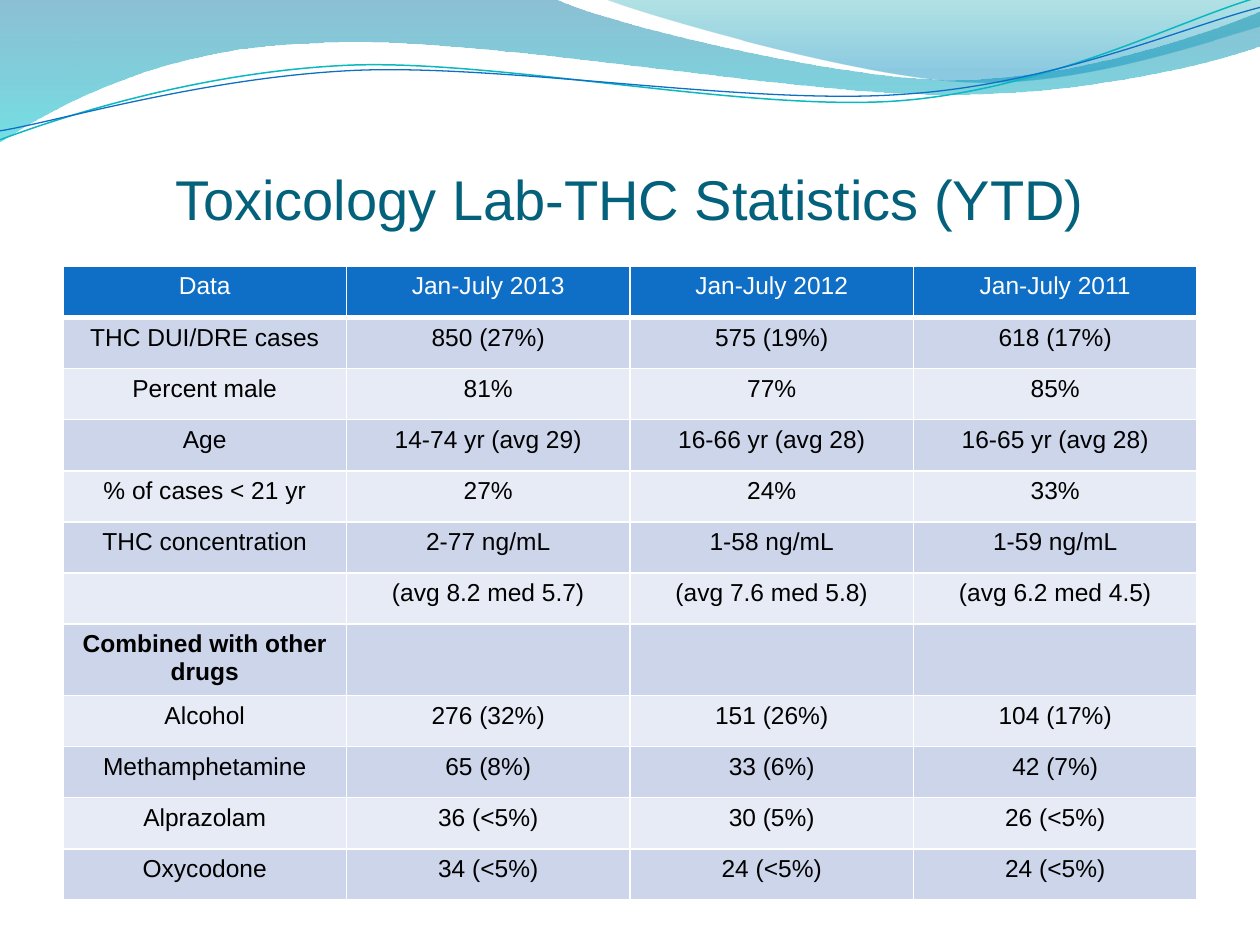
from lxml.etree import SubElement
from pptx import Presentation
from pptx.dml.color import RGBColor
from pptx.enum.text import MSO_ANCHOR, PP_ALIGN
from pptx.oxml.ns import qn
from pptx.util import Cm, Pt

WHITE = "FFFFFF"
HEADER_BLUE = "0F6FC6"
BANDS = ["CCD5EA", "E7EBF5"]
STRAND_ROTATION = 357.3

LOWER_WAVE = [
    [(0, 0)],
    [(11.18, -0.03)],
    [(12.09, 0.43), (16.87, 1.6), (19.25, 1.6)],
    [(21.67, 1.6), (24.33, 0.66), (25.4, 0.23)],
    [(25.43, 0.91)],
    [(24.97, 1.12), (22.1, 1.93), (18.95, 1.9)],
    [(15.8, 1.9), (9.7, 0.71), (6.53, 0.86)],
    [(3.28, 0.91), (1.17, 2.11), (-0.03, 2.87)],
    [(0, 0)],
]
UPPER_WAVE = [
    [(12.17, -0.03)],
    [(12.93, 0.28), (17.32, 1.57), (19.53, 1.65)],
    [(21.74, 1.75), (24.41, 0.81), (25.4, 0.53)],
    [(25.4, 0)],
    [(12.17, -0.03)],
]
TEAL_STRAND = [
    [(-0.05, 2.22)],
    [(1.19, 1.82), (4.02, 1.04), (7.05, 1.05)],
    [(10.05, 1.07), (15.02, 2.37), (18.08, 2.29)],
    [(21.13, 2.2), (23.86, 0.91), (25.41, 0.55)],
]
BLUE_STRAND = [
    [(-0.04, 2.04)],
    [(1.16, 1.9), (4.17, 1.15), (7.2, 1.16)],
    [(10.25, 1.18), (15.13, 2.25), (18.19, 2.16)],
    [(21.21, 2.11), (23.93, 1.06), (25.45, 0.75)],
]

STATISTICS = [
    ["Data", "Jan-July 2013", "Jan-July 2012", "Jan-July 2011"],
    ["THC DUI/DRE cases", "850 (27%)", "575 (19%)", "618 (17%)"],
    ["Percent male", "81%", "77%", "85%"],
    ["Age", "14-74 yr (avg 29)", "16-66 yr (avg 28)", "16-65 yr (avg 28)"],
    ["% of cases < 21 yr", "27%", "24%", "33%"],
    ["THC concentration", "2-77 ng/mL", "1-58 ng/mL", "1-59 ng/mL"],
    ["", "(avg 8.2 med 5.7)", "(avg 7.6 med 5.8)", "(avg 6.2 med 4.5)"],
    ["Combined with other drugs", "", "", ""],
    ["Alcohol", "276 (32%)", "151 (26%)", "104 (17%)"],
    ["Methamphetamine", "65 (8%)", "33 (6%)", "42 (7%)"],
    ["Alprazolam", "36 (<5%)", "30 (5%)", "26 (<5%)"],
    ["Oxycodone", "34 (<5%)", "24 (<5%)", "24 (<5%)"],
]
SECTION_ROW = 7


def color(value):
    return RGBColor.from_string(value)


def style_para(para, size, value, bold=False):
    para.alignment = PP_ALIGN.CENTER
    para.font.name = "Arial"
    para.font.size = Pt(size)
    para.font.bold = bold
    para.font.color.rgb = color(value)
    SubElement(para._p, qn("a:endParaRPr"), sz=str(size * 100))


def add_outline(shapes, left, top, box, segments, closed):
    x, y, width, height = box
    builder = shapes.build_freeform(left + Cm(x), top + Cm(y))
    builder.add_line_segments(
        [(left + Cm(x + width), top + Cm(y + height))], close=False)
    shape = builder.convert_to_shape()
    shape.shadow.inherit = False
    outline = next(shape._element.iter(qn("a:path")))
    for child in list(outline):
        outline.remove(child)
    for index, segment in enumerate(segments):
        tag = "moveTo" if index == 0 else "lnTo" if len(segment) == 1 else "cubicBezTo"
        step = SubElement(outline, qn(f"a:{tag}"))
        for point_x, point_y in segment:
            SubElement(step, qn("a:pt"),
                       x=str(Cm(point_x - x)), y=str(Cm(point_y - y)))
    if closed:
        SubElement(outline, qn("a:close"))
    return shape


def add_wave(shapes, left, top, box, segments, stops):
    wave = add_outline(shapes, left, top, box, segments, True)
    wave.line.fill.background()
    wave.fill.gradient()
    wave.fill.gradient_angle = 270
    for stop, (position, value, _) in zip(wave.fill.gradient_stops, stops):
        stop.position = position
        stop.color.rgb = color(value)
    for tint, (_, _, opacity) in zip(wave._element.spPr.iter(qn("a:srgbClr")), stops):
        SubElement(tint, qn("a:alpha"), val=str(opacity * 1000))


def add_strand(shapes, left, top, box, segments, value, width):
    strand = add_outline(shapes, left, top, box, segments, False)
    strand.rotation = STRAND_ROTATION
    strand.fill.background()
    strand.line.color.rgb = color(value)
    strand.line.width = Pt(width)


def add_wave_header(page, left, top):
    add_wave(page.shapes, left, top, (-0.03, -0.03, 25.45, 2.9), LOWER_WAVE,
             [(0, "0074A1", 45), (1, "00C6CF", 55)])
    add_wave(page.shapes, left, top, (12.17, -0.03, 13.23, 1.78), UPPER_WAVE,
             [(0, "00A1A9", 30), (0.8, "008BBF", 45)])
    strands = page.shapes.add_group_shape().shapes
    add_strand(strands, left, top, (-0.05, 0.56, 25.45, 1.8), TEAL_STRAND,
               "0AB8BF", 0.85)
    add_strand(strands, left, top, (-0.05, 0.76, 25.48, 1.47), BLUE_STRAND,
               HEADER_BLUE, 0.75)


def add_title(page, left, top, width, height):
    box = page.shapes.add_textbox(left, top, width, height)
    frame = box.text_frame
    frame.word_wrap = True
    frame.vertical_anchor = MSO_ANCHOR.BOTTOM
    frame.margin_left = frame.margin_right = frame.margin_bottom = 0
    frame.text = "Toxicology Lab-THC Statistics (YTD)"
    style_para(frame.paragraphs[0], 32, "04617B")


def add_borders(cell, top, bottom):
    properties = cell._tc.get_or_add_tcPr()
    for side, width in {"L": 1, "R": 1, "T": top, "B": bottom}.items():
        line = SubElement(properties, qn(f"a:ln{side}"), w=str(Pt(width)))
        fill = SubElement(line, qn("a:solidFill"))
        SubElement(fill, qn("a:srgbClr"), val=WHITE)


def add_statistics_table(page, left, top, width, row_height):
    rows, columns = len(STATISTICS), len(STATISTICS[0])
    table = page.shapes.add_table(
        rows, columns, left, top, width, row_height * rows).table
    table.horz_banding = False
    for row, texts in enumerate(STATISTICS):
        header = row == 0
        for column, text in enumerate(texts):
            cell = table.cell(row, column)
            cell.text = text
            style_para(cell.text_frame.paragraphs[0], 14,
                       WHITE if header else "000000", row == SECTION_ROW)
            add_borders(cell, 3 if row == 1 else 1, 3 if header else 1)
            cell.fill.solid()
            cell.fill.fore_color.rgb = color(
                HEADER_BLUE if header else BANDS[(row - 1) % 2])


def main():
    deck = Presentation()
    deck.slide_width, deck.slide_height = Cm(25.4), Cm(19.05)
    page = deck.slides.add_slide(deck.slide_layouts[6])
    add_wave_header(page, Cm(0), Cm(0))
    add_title(page, Cm(1.27), Cm(2.33), Cm(22.86), Cm(2.34))
    add_statistics_table(page, Cm(1.27), Cm(5.37), Cm(22.86), Cm(1.03))
    deck.save("out.pptx")


if __name__ == "__main__":
    main()
